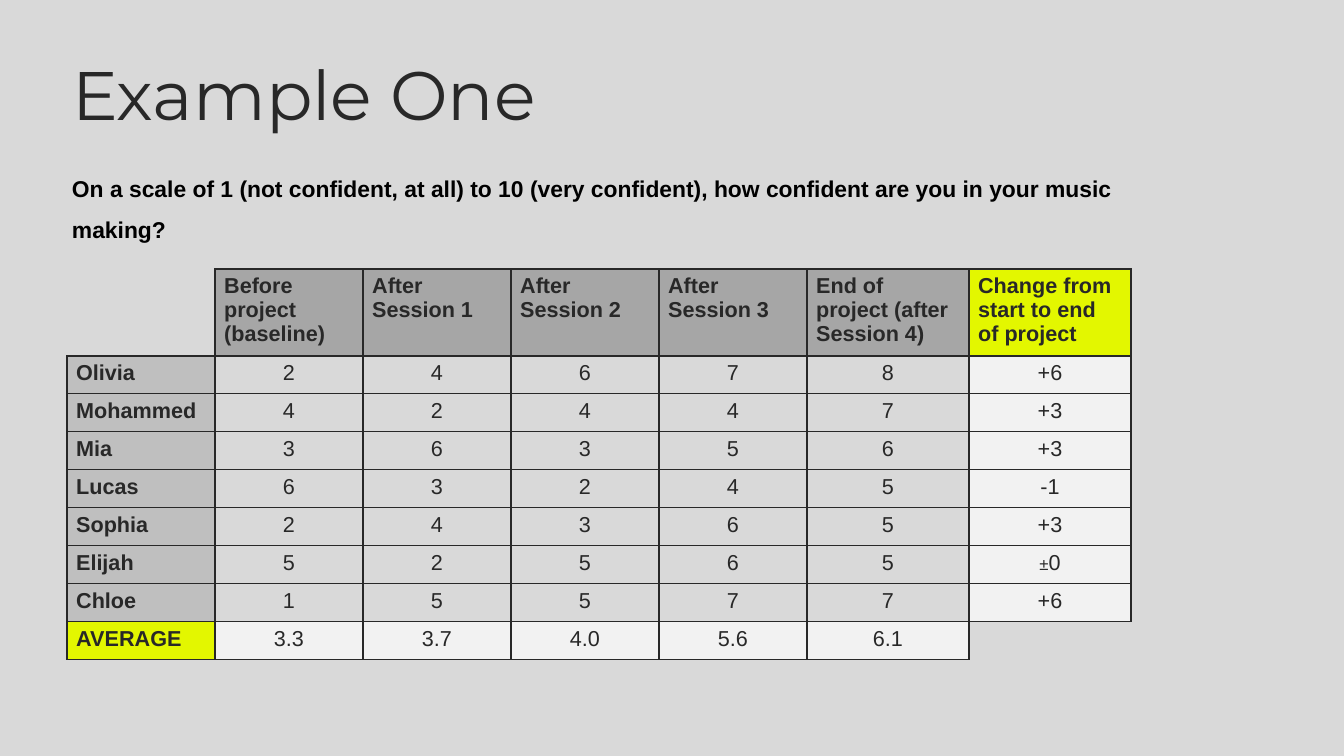
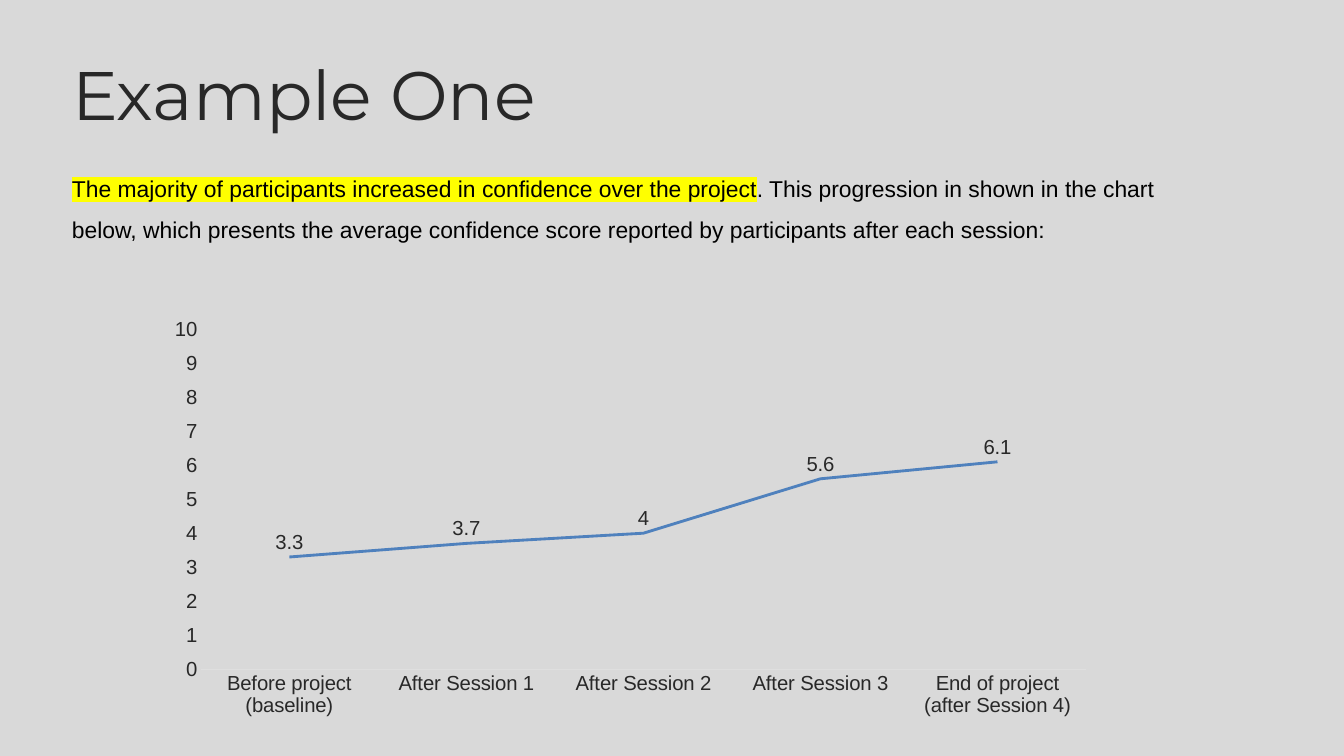
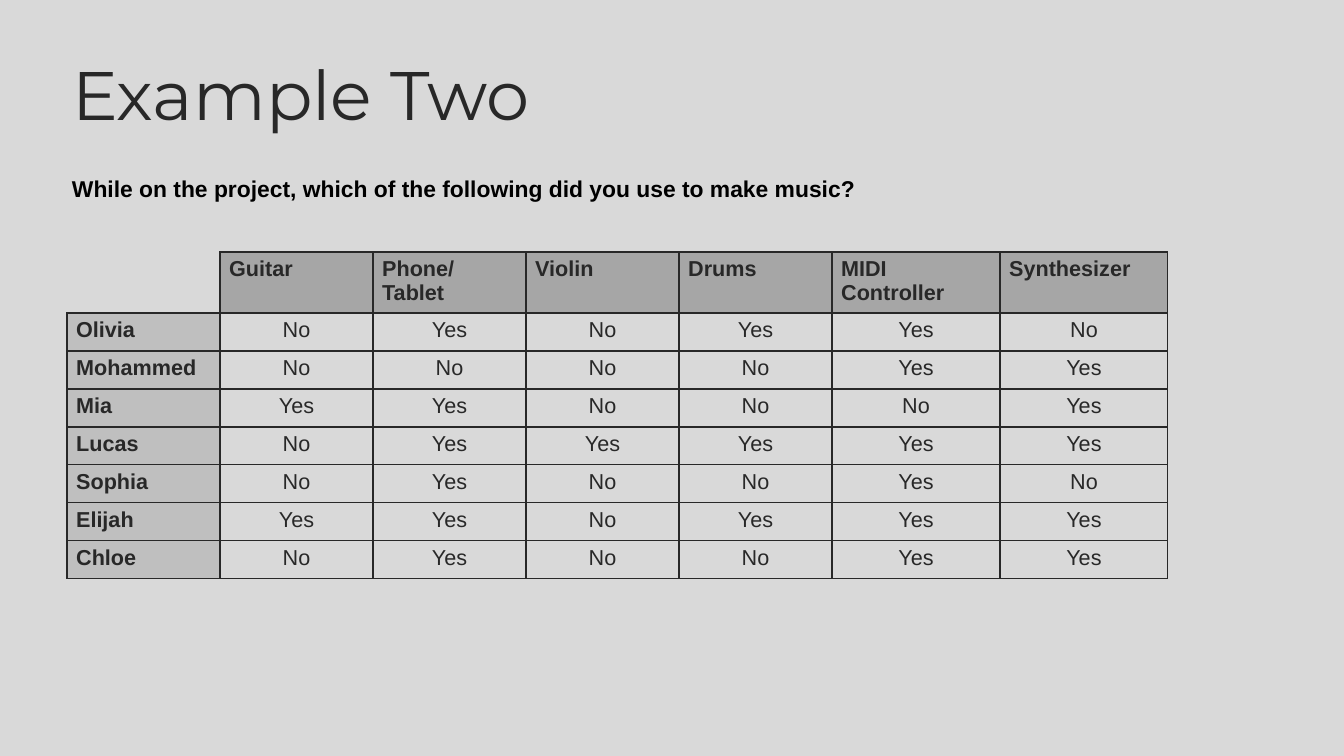
"""Build three slides showing example survey results from a music project."""
from lxml.etree import SubElement
from pptx import Presentation
from pptx.chart.data import CategoryChartData
from pptx.dml.color import RGBColor
from pptx.enum.chart import XL_CHART_TYPE as ChartType
from pptx.enum.chart import XL_LABEL_POSITION as LabelPosition
from pptx.enum.chart import XL_MARKER_STYLE as MarkerStyle
from pptx.enum.chart import XL_TICK_MARK as TickMark
from pptx.enum.text import MSO_ANCHOR as Anchor
from pptx.enum.text import MSO_AUTO_SIZE as AutoSize
from pptx.enum.text import PP_ALIGN as Align
from pptx.oxml.ns import qn
from pptx.util import Pt

PX = 10000
SLIDE_SIZE = (1344, 756)
TITLE_BOX = (67, 30, 1210, 126)
LEFT, INTRO_TOP, INTRO_WIDTH = 67, 156, 1127
INSET = 5
ROW_HEIGHT = 38
CHART_BOX = (156, 310, 949, 415)

BACKGROUND = RGBColor(0xD9, 0xD9, 0xD9)
INK = RGBColor(0x28, 0x28, 0x28)
BLACK = RGBColor(0x00, 0x00, 0x00)
HEADER_GRAY = RGBColor(0xA6, 0xA6, 0xA6)
NAME_GRAY = RGBColor(0xBF, 0xBF, 0xBF)
RESULT_GRAY = RGBColor(0xF2, 0xF2, 0xF2)
LIME = RGBColor(0xE3, 0xF7, 0x00)
YELLOW = RGBColor(0xFF, 0xFF, 0x00)
LINE_BLUE = RGBColor(0x4F, 0x81, 0xBD)
AXIS_GRAY = RGBColor(0xDF, 0xDF, 0xDF)

TITLE_FONT, BODY_FONT = "Montserrat", "Arial"
TABLE_SIZE, CHART_SIZE = 17, 16

STAGES = ["Before project (baseline)", "After Session 1", "After Session 2",
          "After Session 3", "End of project (after Session 4)"]
AVERAGES = [3.3, 3.7, 4.0, 5.6, 6.1]

CONFIDENCE = {
    "top": 269, "header_height": 87, "widths": [148] * 5 + [162] * 2,
    "result_column": 6, "result_row": 8,
    "rows": [
        ["", *STAGES, "Change from start to end of project"],
        ["Olivia", "2", "4", "6", "7", "8", "+6"],
        ["Mohammed", "4", "2", "4", "4", "7", "+3"],
        ["Mia", "3", "6", "3", "5", "6", "+3"],
        ["Lucas", "6", "3", "2", "4", "5", "-1"],
        ["Sophia", "2", "4", "3", "6", "5", "+3"],
        ["Elijah", "5", "2", "5", "6", "5", [("±", 13.2), ("0", TABLE_SIZE)]],
        ["Chloe", "1", "5", "5", "7", "7", "+6"],
        ["AVERAGE", *(f"{average:.1f}" for average in AVERAGES), ""],
    ],
}
INSTRUMENTS = {
    "top": 252, "header_height": 61, "widths": [153] * 5 + [168] * 2,
    "result_column": None, "result_row": None,
    "rows": [
        ["", "Guitar", "Phone/\nTablet", "Violin", "Drums", "MIDI Controller", "Synthesizer"],
        ["Olivia", "No", "Yes", "No", "Yes", "Yes", "No"],
        ["Mohammed", "No", "No", "No", "No", "Yes", "Yes"],
        ["Mia", "Yes", "Yes", "No", "No", "No", "Yes"],
        ["Lucas", "No", "Yes", "Yes", "Yes", "Yes", "Yes"],
        ["Sophia", "No", "Yes", "No", "No", "Yes", "No"],
        ["Elijah", "Yes", "Yes", "No", "Yes", "Yes", "Yes"],
        ["Chloe", "No", "Yes", "No", "No", "Yes", "Yes"],
    ],
}

CONFIDENCE_QUESTION = ("On a scale of 1 (not confident, at all) to 10 (very confident), "
                       "how confident are you in your music making?")
CONFIDENCE_FINDING = "The majority of participants increased in confidence over the project"
CONFIDENCE_DETAIL = (". This progression in shown in the chart below, which presents the average "
                     "confidence score reported by participants after each session:")
INSTRUMENT_QUESTION = "While on the project, which of the following did you use to make music?"


def px(*lengths):
    return [length * PX for length in lengths]


def set_font(font, name, size, color, bold=False):
    font.name, font.size, font.bold = name, Pt(size), bold
    font.color.rgb = color


def set_frame(text_frame, anchor):
    text_frame.word_wrap = True
    text_frame.vertical_anchor = anchor
    text_frame.margin_left = text_frame.margin_right = INSET * PX
    text_frame.margin_top = text_frame.margin_bottom = INSET * PX


def add_titled_slide(presentation, title):
    slide = presentation.slides.add_slide(presentation.slide_layouts[5])
    shape = slide.shapes.title
    shape.left, shape.top, shape.width, shape.height = px(*TITLE_BOX)
    shape.text_frame.text = title
    set_frame(shape.text_frame, Anchor.MIDDLE)
    paragraph = shape.text_frame.paragraphs[0]
    paragraph.alignment = Align.LEFT
    set_font(paragraph.font, TITLE_FONT, 54, INK)
    return slide


def add_intro(slide, text, height, highlighted="", bold=False):
    shape = slide.shapes.add_textbox(*px(LEFT, INTRO_TOP, INTRO_WIDTH, height))
    set_frame(shape.text_frame, Anchor.TOP)
    shape.text_frame.auto_size = AutoSize.SHAPE_TO_FIT_TEXT
    paragraph = shape.text_frame.paragraphs[0]
    paragraph.line_spacing = 1.5
    set_font(paragraph.font, BODY_FONT, 18, BLACK, bold)
    if highlighted:
        run = paragraph.add_run()
        run.text = highlighted
        highlight = SubElement(run._r.get_or_add_rPr(), qn("a:highlight"))
        SubElement(highlight, qn("a:srgbClr"), val=str(YELLOW))
    paragraph.add_run().text = text


def set_borders(cell, visible_sides):
    properties = cell._tc.get_or_add_tcPr()
    for side in "LRTB":
        line = SubElement(properties, qn(f"a:ln{side}"), w=str(Pt(1)))
        if side in visible_sides:
            fill = SubElement(line, qn("a:solidFill"))
            SubElement(fill, qn("a:srgbClr"), val=str(INK))
        else:
            SubElement(line, qn("a:noFill"))


def cell_color(row, column, content):
    in_result = row == content["result_row"] or column == content["result_column"]
    if not content["rows"][row][column]:
        return None
    if row == 0 or column == 0:
        return LIME if in_result else HEADER_GRAY if row == 0 else NAME_GRAY
    return RESULT_GRAY if in_result else None


def fill_cell(cell, value, is_heading):
    text_frame = cell.text_frame
    if isinstance(value, str):
        text_frame.text = value
    else:
        for text, size in value:
            run = text_frame.paragraphs[0].add_run()
            run.text, run.font.size = text, Pt(size)
    for paragraph in text_frame.paragraphs:
        paragraph.alignment = Align.LEFT if is_heading else Align.CENTER
        set_font(paragraph.font, BODY_FONT, TABLE_SIZE, INK, is_heading)


def add_results_table(slide, content):
    rows, widths = content["rows"], content["widths"]
    heights = [content["header_height"]] + [ROW_HEIGHT] * (len(rows) - 1)
    table = slide.shapes.add_table(
        len(rows), len(widths), *px(LEFT, content["top"], sum(widths), sum(heights))).table
    table.first_row = table.horz_banding = False
    for column, width in zip(table.columns, widths):
        column.width = width * PX
    for row, height in zip(table.rows, heights):
        row.height = height * PX
    for row_index, values in enumerate(rows):
        for column_index, value in enumerate(values):
            cell = table.cell(row_index, column_index)
            blank_sides = "RB" if row_index == 0 else "LT"
            set_borders(cell, "LRTB" if value else blank_sides)
            color = cell_color(row_index, column_index, content)
            if color is None:
                cell.fill.background()
            else:
                cell.fill.solid()
                cell.fill.fore_color.rgb = color
            fill_cell(cell, value, row_index == 0 or column_index == 0)


def add_average_chart(slide):
    data = CategoryChartData()
    data.categories = STAGES
    data.add_series("Series 1", AVERAGES)
    chart = slide.shapes.add_chart(ChartType.LINE, *px(*CHART_BOX), data).chart
    chart.has_legend = chart.has_title = False
    set_font(chart.font, BODY_FONT, CHART_SIZE, INK)

    for axis in (chart.category_axis, chart.value_axis):
        axis.major_tick_mark = axis.minor_tick_mark = TickMark.NONE
        axis.has_major_gridlines = False
        set_font(axis.tick_labels.font, BODY_FONT, CHART_SIZE, INK)
    chart.category_axis.format.line.color.rgb = AXIS_GRAY
    chart.category_axis.format.line.width = Pt(0.75)
    chart.value_axis.format.line.fill.background()
    chart.value_axis.minimum_scale, chart.value_axis.maximum_scale = 0, 10
    chart.value_axis.major_unit = 1

    plot = chart.plots[0]
    plot.vary_by_categories = False
    series = plot.series[0]
    series.smooth = False
    series.marker.style = MarkerStyle.NONE
    series.format.line.color.rgb = LINE_BLUE
    series.format.line.width = Pt(2.25)
    labels = series.data_labels
    labels.show_value = True
    labels.position = LabelPosition.ABOVE
    set_font(labels.font, BODY_FONT, CHART_SIZE, INK)


def main():
    presentation = Presentation()
    presentation.slide_width, presentation.slide_height = px(*SLIDE_SIZE)
    background = presentation.slide_master.background.fill
    background.solid()
    background.fore_color.rgb = BACKGROUND

    slide = add_titled_slide(presentation, "Example One")
    add_intro(slide, CONFIDENCE_QUESTION, 92, bold=True)
    add_results_table(slide, CONFIDENCE)

    slide = add_titled_slide(presentation, "Example One")
    add_intro(slide, CONFIDENCE_DETAIL, 133, highlighted=CONFIDENCE_FINDING)
    add_average_chart(slide)

    slide = add_titled_slide(presentation, "Example Two")
    add_intro(slide, INSTRUMENT_QUESTION, 51, bold=True)
    add_results_table(slide, INSTRUMENTS)

    presentation.save("out.pptx")


if __name__ == "__main__":
    main()
